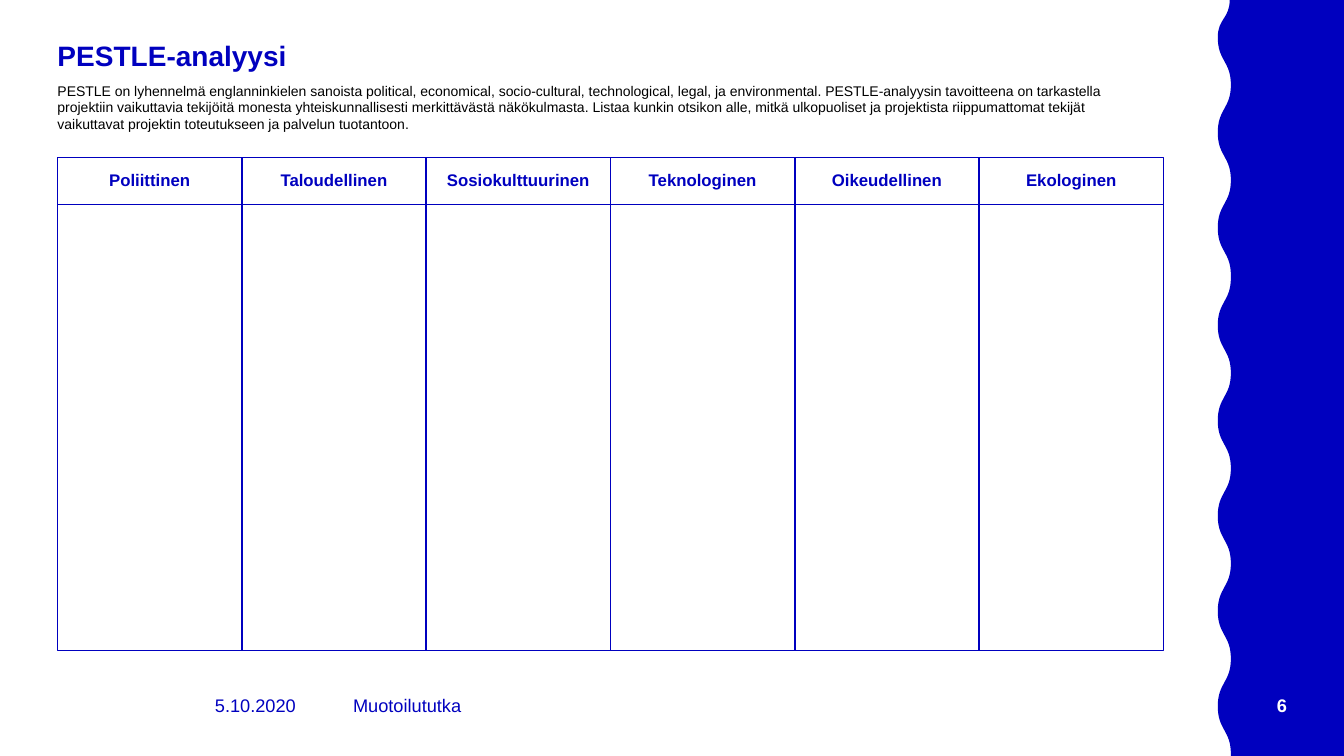
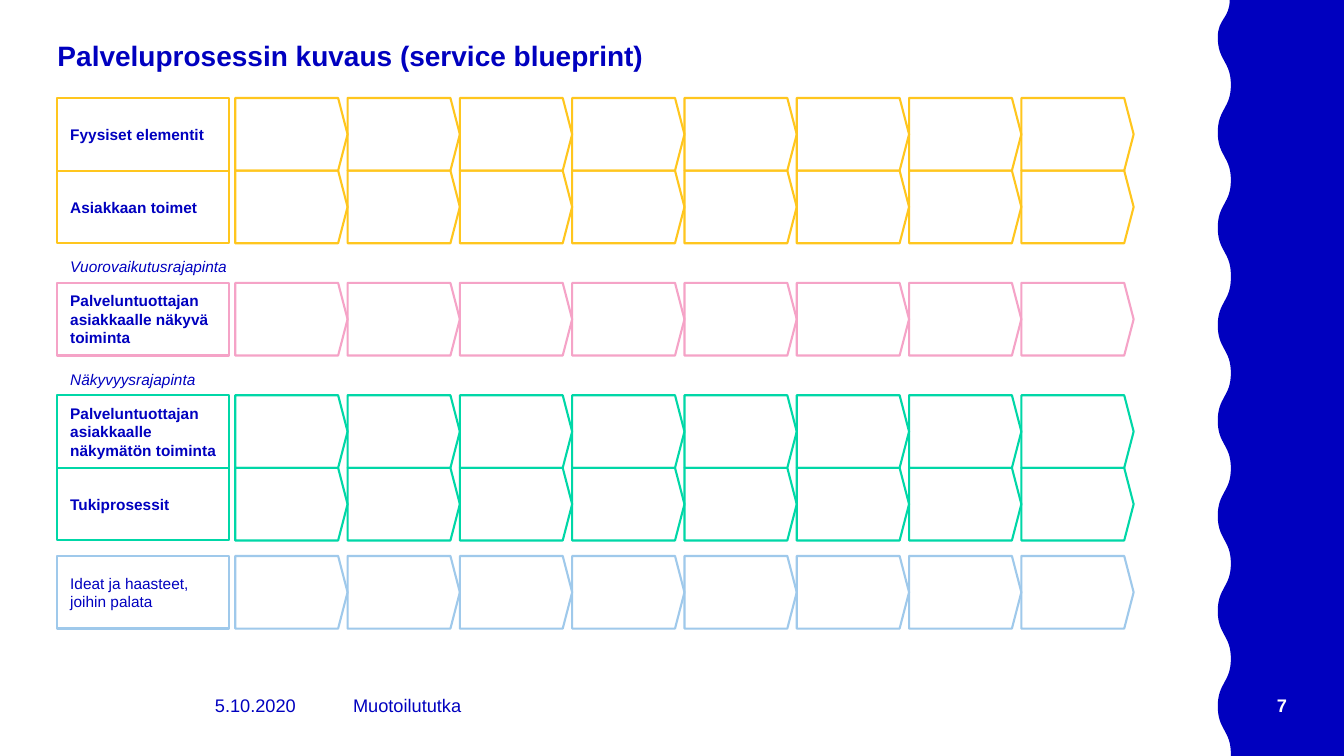
import dataclasses
import typing

import lxml.etree
import pptx
import pptx.dml.color
import pptx.enum.shapes
import pptx.enum.text
import pptx.oxml.ns
import pptx.util

Cm = pptx.util.Cm
RGBColor = pptx.dml.color.RGBColor
Kind = pptx.enum.shapes.MSO_SHAPE
Align = pptx.enum.text.PP_ALIGN
Anchor = pptx.enum.text.MSO_ANCHOR
qn = pptx.oxml.ns.qn

BLUE = RGBColor(0x00, 0x00, 0xBF)
BLACK = RGBColor(0x00, 0x00, 0x00)
WHITE = RGBColor(0xFF, 0xFF, 0xFF)
GOLD = RGBColor(0xFF, 0xC6, 0x1E)
PINK = RGBColor(0xF5, 0xA3, 0xC7)
GREEN = RGBColor(0x00, 0xD7, 0xA7)
SKY = RGBColor(0x9F, 0xC9, 0xEB)

WIDE, HIGH = 33.87, 19.05
LEFT = 1.45


class Box(typing.NamedTuple):
    left: float
    top: float
    width: float
    height: float

    def lengths(self) -> list[pptx.util.Length]:
        return [Cm(side) for side in self]


@dataclasses.dataclass(frozen=True)
class Look:
    size: float
    color: RGBColor = BLUE
    bold: bool = False
    italic: bool = False
    align: Align = Align.LEFT
    anchor: Anchor = Anchor.TOP
    inset: tuple[float, float, float] = (0, 0, 0)


class Row(typing.NamedTuple):
    label: str
    top: float
    color: RGBColor
    bold: bool = True


TITLE = Look(20, bold=True)
INTRO = Look(10, BLACK)
HEAD = Look(12, bold=True, align=Align.CENTER, inset=(0, 0.32, 0))
LABEL = Look(11, bold=True, anchor=Anchor.MIDDLE, inset=(0.33, 0, 0.2))
BORDER = Look(11, italic=True, anchor=Anchor.MIDDLE)
FOOT = Look(13, anchor=Anchor.MIDDLE)
DATE = dataclasses.replace(FOOT, align=Align.CENTER)
PAGE = dataclasses.replace(FOOT, color=WHITE, bold=True, align=Align.RIGHT)

HEADS = ["Poliittinen", "Taloudellinen", "Sosiokulttuurinen",
         "Teknologinen", "Oikeudellinen", "Ekologinen"]
GRID = Box(LEFT, 3.97, 27.87, 12.42)
RULE = 5.16

ROW_LEFT, ROW_HIGH = 1.44, 1.83
ROWS = [
    Row("Fyysiset elementit", 2.47, GOLD),
    Row("Asiakkaan toimet", 2.47 + ROW_HIGH, GOLD),
    Row("Palveluntuottajan asiakkaalle näkyvä toiminta", 7.13, PINK),
    Row("Palveluntuottajan asiakkaalle näkymätön toiminta", 9.96, GREEN),
    Row("Tukiprosessit", 9.96 + ROW_HIGH, GREEN),
    Row("Ideat ja haasteet, joihin palata", 14.01, SKY, False),
]
BORDERS = {"Vuorovaikutusrajapinta": 6.53, "Näkyvyysrajapinta": 9.37}
STEPS = 8
STEP_LEFT, STEP_WIDE = 5.93, 2.83


def write(shape, text: str, look: Look) -> None:
    frame = shape.text_frame
    left, top, right = look.inset
    layout = {"word_wrap": True, "vertical_anchor": look.anchor,
              "margin_left": Cm(left), "margin_top": Cm(top),
              "margin_right": Cm(right), "margin_bottom": 0}
    for key, value in layout.items():
        setattr(frame, key, value)
    line = frame.paragraphs[0]
    line.alignment = look.align
    run = line.add_run()
    run.text = text
    style = {"name": "Arial", "size": pptx.util.Pt(look.size),
             "bold": look.bold, "italic": look.italic}
    for key, value in style.items():
        setattr(run.font, key, value)
    run.font.color.rgb = look.color


def add_text(slide, box: Box, text: str, look: Look) -> None:
    write(slide.shapes.add_textbox(*box.lengths()), text, look)


def add_frame(slide, kind: Kind, box: Box, color: RGBColor, weight: float):
    shape = slide.shapes.add_shape(kind, *box.lengths())
    shape.shadow.inherit = False
    shape.fill.background()
    shape.line.color.rgb = color
    shape.line.width = pptx.util.Pt(weight)
    return shape


def add_rule(slide, left: float, right: float, top: float) -> None:
    rule = slide.shapes.add_connector(
        pptx.enum.shapes.MSO_CONNECTOR.STRAIGHT,
        Cm(left), Cm(top), Cm(right), Cm(top))
    rule.line.color.rgb = BLUE
    rule.line.width = pptx.util.Pt(1)
    lxml.etree.SubElement(rule.element.spPr, qn("a:effectLst"))


def bend(shape, count: int) -> None:
    ends = list(shape.element.iter(qn("a:pt")))[:count + 1]
    spots = [(int(end.get("x")), int(end.get("y"))) for end in ends]
    for end, (x1, y1), (x2, y2) in zip(ends[1:], spots, spots[1:]):
        if x1 == x2:
            continue
        line = end.getparent()
        curve = lxml.etree.Element(qn("a:cubicBezTo"))
        middle = (y1 + y2) // 2
        for x, y in ((x1, middle), (x2, middle), (x2, y2)):
            lxml.etree.SubElement(curve, qn("a:pt"), x=str(x), y=str(y))
        line.getparent().replace(line, curve)


def add_band(slide, layout) -> None:
    crest, trough, half = 30.69, 31.02, 1.2
    upper = [0.94 + half * turn for turn in range(6)]
    lower = [7.0 + half * turn for turn in range(11)]
    sides = [(crest, trough)[turn % 2] for turn in range(6)]
    sides += [(trough, crest)[turn % 2] for turn in range(11)]
    wave = list(zip(sides, upper + lower))
    edge = wave + [(trough, HIGH), (WIDE, HIGH), (WIDE, 0)]
    outline = slide.shapes.build_freeform(Cm(30.99), 0)
    outline.add_line_segments([(Cm(x), Cm(y)) for x, y in edge], close=True)
    band = outline.convert_to_shape()
    bend(band, len(wave))
    band.shadow.inherit = False
    band.fill.solid()
    band.fill.fore_color.rgb = BLUE
    band.line.fill.background()
    layout.shapes.element.append(band.element)


def add_page(deck, title: str, number: int):
    slide = deck.slides.add_slide(deck.slide_layouts[6])
    add_text(slide, Box(LEFT, 0.97, 21.8, 1.09), title, TITLE)
    add_text(slide, Box(4.62, 17.42, 3.63, 0.71), "5.10.2020", DATE)
    add_text(slide, Box(8.9, 17.42, 11.43, 0.71), "Muotoilututka", FOOT)
    add_text(slide, Box(29, 17.42, 3.43, 0.71), str(number), PAGE)
    return slide


def fill_pestle(slide) -> None:
    add_text(slide, Box(LEFT, 2.07, 26.64, 1.5),
             "PESTLE on lyhennelmä englanninkielen sanoista political, "
             "economical, socio-cultural, technological, legal, ja "
             "environmental. PESTLE-analyysin tavoitteena on tarkastella "
             "projektiin vaikuttavia tekijöitä monesta yhteiskunnallisesti "
             "merkittävästä näkökulmasta. Listaa kunkin otsikon alle, mitkä "
             "ulkopuoliset ja projektista riippumattomat tekijät vaikuttavat "
             "projektin toteutukseen ja palvelun tuotantoon.", INTRO)
    width = GRID.width / len(HEADS)
    for index, head in enumerate(HEADS):
        box = GRID._replace(left=GRID.left + index * width, width=width)
        write(add_frame(slide, Kind.RECTANGLE, box, BLUE, 1), head, HEAD)
    add_rule(slide, GRID.left, GRID.left + GRID.width, RULE)


def fill_blueprint(slide) -> None:
    for row in ROWS:
        box = Box(ROW_LEFT, row.top, 4.33, ROW_HIGH)
        label = add_frame(slide, Kind.RECTANGLE, box, row.color, 1.5)
        write(label, row.label, dataclasses.replace(LABEL, bold=row.bold))
        for index in range(STEPS):
            box = Box(STEP_LEFT + index * STEP_WIDE, row.top,
                      STEP_WIDE, ROW_HIGH)
            step = add_frame(slide, Kind.PENTAGON, box, row.color, 1.5)
            step.adjustments[0] = 0.13
    for text, top in BORDERS.items():
        add_text(slide, Box(1.77, top, 6.3, 0.36), text, BORDER)


def main() -> None:
    deck = pptx.Presentation()
    deck.slide_width, deck.slide_height = Cm(WIDE), Cm(HIGH)
    pestle = add_page(deck, "PESTLE-analyysi", 6)
    add_band(pestle, pestle.slide_layout)
    fill_pestle(pestle)
    fill_blueprint(
        add_page(deck, "Palveluprosessin kuvaus (service blueprint)", 7))
    deck.save("out.pptx")


if __name__ == "__main__":
    main()
